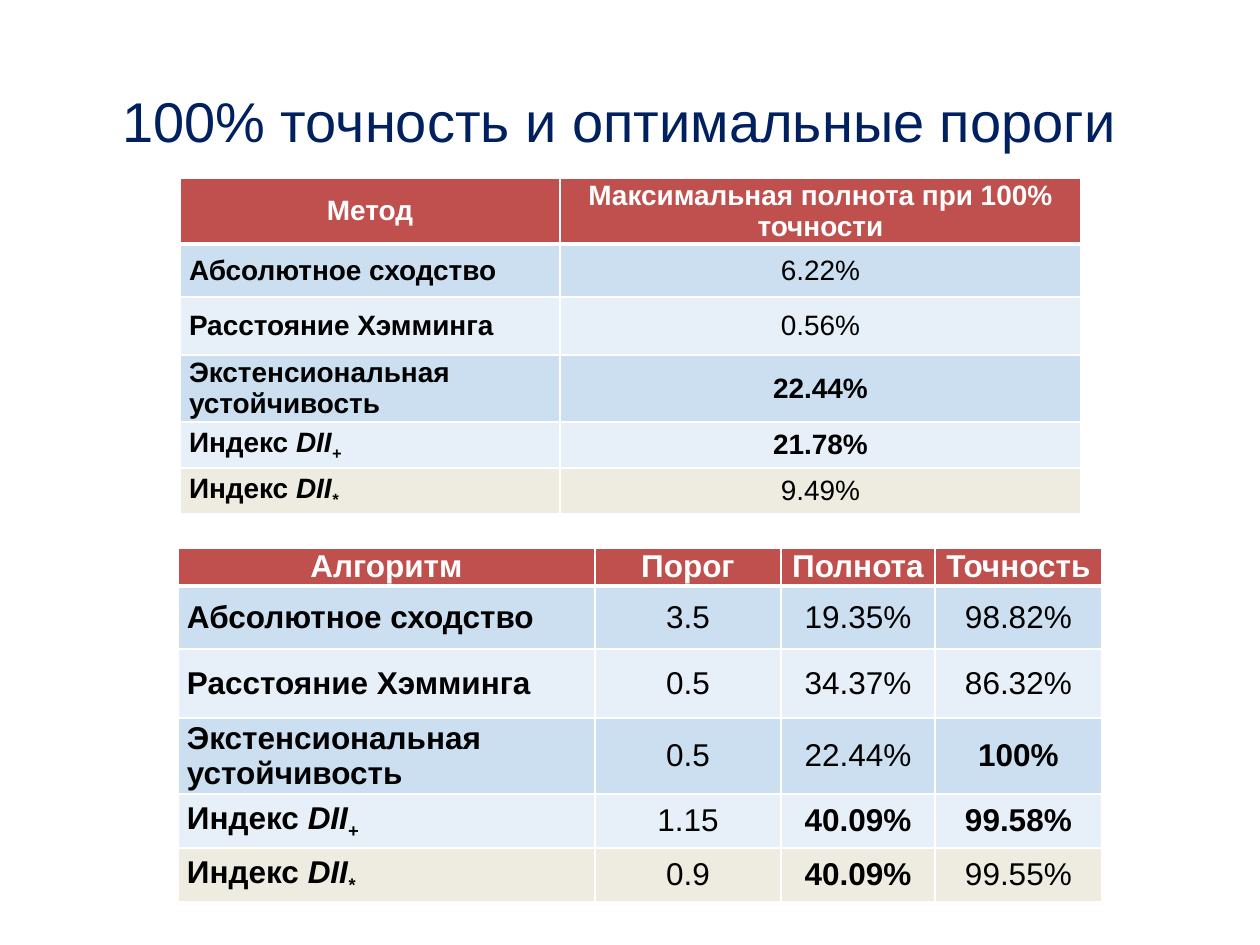
from lxml.etree import SubElement
from pptx import Presentation
from pptx.dml.color import RGBColor as RGB
from pptx.enum.text import MSO_ANCHOR as ANCHOR, PP_ALIGN as ALIGN
from pptx.oxml.ns import qn
from pptx.util import Pt

PX = 914400 / 126
THEME = {
    "font": "Arial", "title": "002060", "title_size": 32,
    "head": "C0504D", "head_text": "FFFFFF", "text": "000000", "rule": "FFFFFF",
    "bands": ["CBDFF1", "E7F0F8", "CBDFF1", "E7F0F8", "EEECE1"],
    "method_size": 16, "algorithm_size": 18,
}


def px(n):
    return round(n * PX)


def add_run(p, text, size, color, bold=False, italic=False, baseline=None):
    r = p.add_run()
    r.text = text
    fmt = {"name": THEME["font"], "size": Pt(size), "bold": bold, "italic": italic}
    for key, value in fmt.items():
        setattr(r.font, key, value)
    r.font.color.rgb = RGB.from_string(color)
    if baseline:
        r.font._element.set("baseline", str(baseline))


# Row labels are lists of (text, extra run format)
italic, sub = {"italic": True}, {"baseline": -25000}
labels = [
    [("Абсолютное сходство", {})],
    [("Расстояние Хэмминга", {})],
    [("Экстенсиональная устойчивость", {})],
    [("Индекс ", {}), ("DII", italic), ("+", {**italic, **sub})],
    [("Индекс ", {}), ("DII", italic), ("*", {**italic, **sub})],
]
tables = [
    {
        "at": (180, 178), "size": THEME["method_size"],
        "cols": [380, 521], "rows": [66, 53, 58, 67, 46, 46],
        "head": ["Метод", "Максимальная полнота при 100% точности"],
        "values": [["6.22%"], ["0.56%"], ["22.44%"], ["21.78%"], ["9.49%"]],
        "bold": {(3, 1), (4, 1)},
    },
    {
        "at": (178, 548), "size": THEME["algorithm_size"],
        "cols": [417, 186, 154, 167], "rows": [38, 63, 69, 76, 54, 54],
        "head": ["Алгоритм", "Порог", "Полнота", "Точность"],
        "values": [
            ["3.5", "19.35%", "98.82%"],
            ["0.5", "34.37%", "86.32%"],
            ["0.5", "22.44%", "100%"],
            ["1.15", "40.09%", "99.58%"],
            ["0.9", "40.09%", "99.55%"],
        ],
        "bold": {(3, 3), (4, 2), (4, 3), (5, 2)},
    },
]

prs = Presentation()
prs.slide_width, prs.slide_height = px(1260), px(945)
s = prs.slides.add_slide(prs.slide_layouts[5])

title = s.shapes.title
box = {"left": 0, "top": 42, "width": 1239, "height": 157}
for key, value in box.items():
    setattr(title, key, px(value))
tf = title.text_frame
tf.vertical_anchor = ANCHOR.MIDDLE
p = tf.paragraphs[0]
p.alignment = ALIGN.CENTER
add_run(p, "100% точность и оптимальные пороги", THEME["title_size"], THEME["title"])

for spec in tables:
    cols, rows, size = spec["cols"], spec["rows"], spec["size"]
    left, top = spec["at"]
    table = s.shapes.add_table(len(rows), len(cols), px(left), px(top),
                               px(sum(cols)), px(sum(rows))).table
    for col, width in zip(table.columns, cols):
        col.width = px(width)
    for row, height in zip(table.rows, rows):
        row.height = px(height)

    grid = [[[(text, {})] for text in spec["head"]]]
    for label, values in zip(labels, spec["values"]):
        grid.append([label] + [[(value, {})] for value in values])

    for i, line in enumerate(grid):
        for j, runs in enumerate(line):
            is_head, is_label = i == 0, j == 0
            cell = table.cell(i, j)
            cell_format = {"vertical_anchor": ANCHOR.MIDDLE, "margin_left": px(9),
                           "margin_right": px(9), "margin_top": 0, "margin_bottom": 0}
            for key, value in cell_format.items():
                setattr(cell, key, value)

            p = cell.text_frame.paragraphs[0]
            if is_head or not is_label:
                p.alignment = ALIGN.CENTER
                p.space_before = Pt(6)
                p.space_after = Pt(12 if is_head else 6)
            color = THEME["head_text" if is_head else "text"]
            bold = is_head or is_label or (i, j) in spec["bold"]
            for text, extra in runs:
                add_run(p, text, size, color, bold, **extra)

            # Border lines precede the fill in the cell properties
            heavy = {0: "lnB", 1: "lnT"}.get(i)
            tcPr = cell._tc.get_or_add_tcPr()
            for side in ("lnL", "lnR", "lnT", "lnB"):
                ln = SubElement(tcPr, qn(f"a:{side}"), w=str(Pt(3 if side == heavy else 1)))
                fill = SubElement(ln, qn("a:solidFill"))
                SubElement(fill, qn("a:srgbClr"), val=THEME["rule"])
            cell.fill.solid()
            cell.fill.fore_color.rgb = RGB.from_string(
                THEME["head"] if is_head else THEME["bands"][i - 1])

prs.save("out.pptx")
